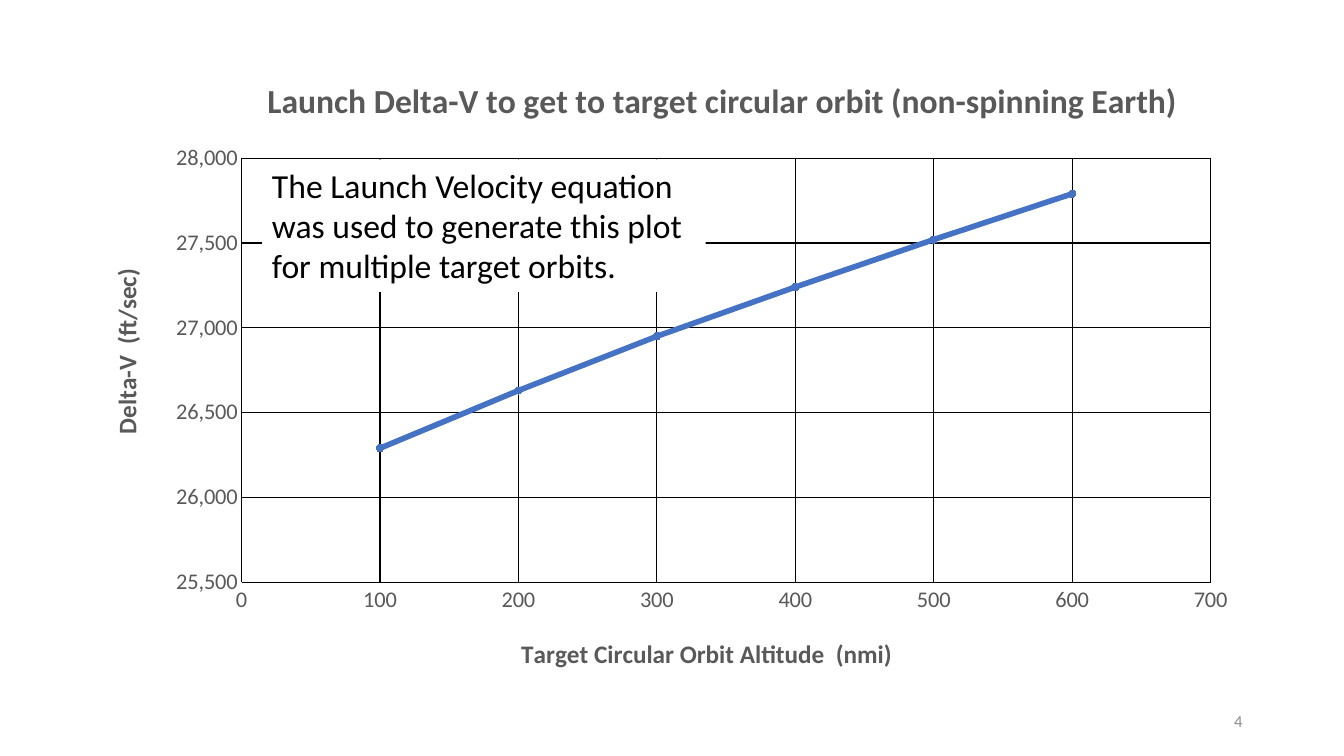
from lxml import etree
from pptx import Presentation
from pptx import util as u
from pptx.chart import data as chart_data
from pptx.dml.color import RGBColor
from pptx.enum import chart as ch, shapes, text
from pptx.oxml.ns import qn

SLIDE_W, SLIDE_H = 13.33, 7.5
FONT = "Calibri"
COLORS = {"ink": "000000", "paper": "FFFFFF", "label": "595959",
          "page": "8C8C8C", "line": "4472C4"}
DELTA_V = {100: 26290, 200: 26630, 300: 26950,
           400: 27240, 500: 27520, 600: 27790}


def rgb(name):
    return RGBColor.from_string(COLORS[name])


def style(font, size, color, bold=False):
    font.name, font.size, font.bold = FONT, u.Pt(size), bold
    font.color.rgb = rgb(color)


def add_run(p, words, size, color, bold=False):
    r = p.add_run()
    r.text = words
    style(r.font, size, color, bold)


def place(box):
    """Turn shares of the slide into left, top, width and height."""
    x, y, w, h = box
    return [u.Inches(v) for v in (x * SLIDE_W, y * SLIDE_H, w * SLIDE_W, h * SLIDE_H)]


def set_layout(parent, index, **shares):
    """Position a chart part by shares of the chart area."""
    for old in parent.findall(qn("c:layout")):
        parent.remove(old)
    layout = etree.Element(qn("c:layout"))
    manual = etree.SubElement(layout, qn("c:manualLayout"))
    if "w" in shares:
        etree.SubElement(manual, qn("c:layoutTarget")).set("val", "inner")
    for key in ("x", "y"):
        etree.SubElement(manual, qn(f"c:{key}Mode")).set("val", "edge")
    for key, share in shares.items():
        etree.SubElement(manual, qn(f"c:{key}")).set("val", str(share))
    parent.insert(index, layout)


def set_title(title, words, size, x, y):
    add_run(title.text_frame.paragraphs[0], words, size, "label", bold=True)
    set_layout(title._element, 1, x=x, y=y)


def format_axis(axis, low, high, step, number_format):
    axis.minimum_scale, axis.maximum_scale, axis.major_unit = low, high, step
    axis.major_tick_mark = axis.minor_tick_mark = ch.XL_TICK_MARK.NONE
    axis.has_major_gridlines = True
    for line in (axis.format.line, axis.major_gridlines.format.line):
        line.color.rgb = rgb("ink")
        line.width = u.Pt(0.75)
    labels = axis.tick_labels
    labels.number_format, labels.number_format_is_linked = number_format, False
    style(labels.font, 16, "label")


def add_orbit_chart(slide, box):
    data = chart_data.XyChartData()
    points = data.add_series("Series 1")
    for altitude, speed in DELTA_V.items():
        points.add_data_point(altitude, speed)
    chart = slide.shapes.add_chart(ch.XL_CHART_TYPE.XY_SCATTER_LINES,
                                   *place(box), data).chart
    chart.has_legend = False
    style(chart.font, 10, "ink")

    # Axes and plot area
    format_axis(chart.category_axis, 0, 700, 100, "General")
    format_axis(chart.value_axis, 25500, 28000, 500, "#,##0")
    plot_area = chart._chartSpace.chart.plotArea
    set_layout(plot_area, 0, x=0.13, y=0.153, w=0.835, h=0.685)

    # Titles
    chart.has_title = True
    set_title(chart.chart_title,
              "Launch Delta-V to get to target circular orbit (non-spinning Earth)",
              24, 0.147, 0.013)
    set_title(chart.category_axis.axis_title,
              "Target Circular Orbit Altitude  (nmi)", 18, 0.367, 0.918)
    speed_title = chart.value_axis.axis_title
    set_title(speed_title, "Delta-V  (ft/sec)", 18, 0.012, 0.324)
    body = speed_title.text_frame._txBody.bodyPr
    body.set("rot", "-5400000")
    body.set("vert", "horz")

    # Series line and markers
    chart.plots[0].vary_by_categories = False
    series = chart.plots[0].series[0]
    series.smooth = False
    series.format.line.color.rgb = rgb("line")
    series.format.line.width = u.Pt(4)
    marker = series.marker
    marker.style, marker.size = ch.XL_MARKER_STYLE.CIRCLE, 5
    marker.format.fill.solid()
    marker.format.fill.fore_color.rgb = rgb("line")
    marker.format.line.color.rgb = rgb("line")


def add_note(slide, box):
    sp = slide.shapes.add_shape(shapes.MSO_SHAPE.RECTANGLE, *place(box))
    sp.shadow.inherit = False
    sp.fill.solid()
    sp.fill.fore_color.rgb = rgb("paper")
    sp.line.fill.background()
    tf = sp.text_frame
    tf.word_wrap = True
    tf.auto_size = text.MSO_AUTO_SIZE.SHAPE_TO_FIT_TEXT
    tf.vertical_anchor = text.MSO_ANCHOR.TOP
    p = tf.paragraphs[0]
    p.alignment = text.PP_ALIGN.LEFT
    add_run(p, "The Launch Velocity equation was used to generate this plot "
               "for multiple target orbits.", 24, "ink")


def add_page_number(slide, box):
    tf = slide.shapes.add_textbox(*place(box)).text_frame
    tf.word_wrap = True
    tf.vertical_anchor = text.MSO_ANCHOR.MIDDLE
    p = tf.paragraphs[0]
    p.alignment = text.PP_ALIGN.RIGHT
    add_run(p, "4", 12, "page")


def main():
    prs = Presentation()
    prs.slide_width, prs.slide_height = u.Inches(SLIDE_W), u.Inches(SLIDE_H)
    slide = prs.slides.add_slide(prs.slide_layouts[6])
    add_page_number(slide, (0.707, 0.927, 0.225, 0.053))
    add_orbit_chart(slide, (0.0675, 0.084, 0.8635, 0.819))
    add_note(slide, (0.195, 0.211, 0.33, 0.175))
    prs.save("out.pptx")


if __name__ == "__main__":
    main()
